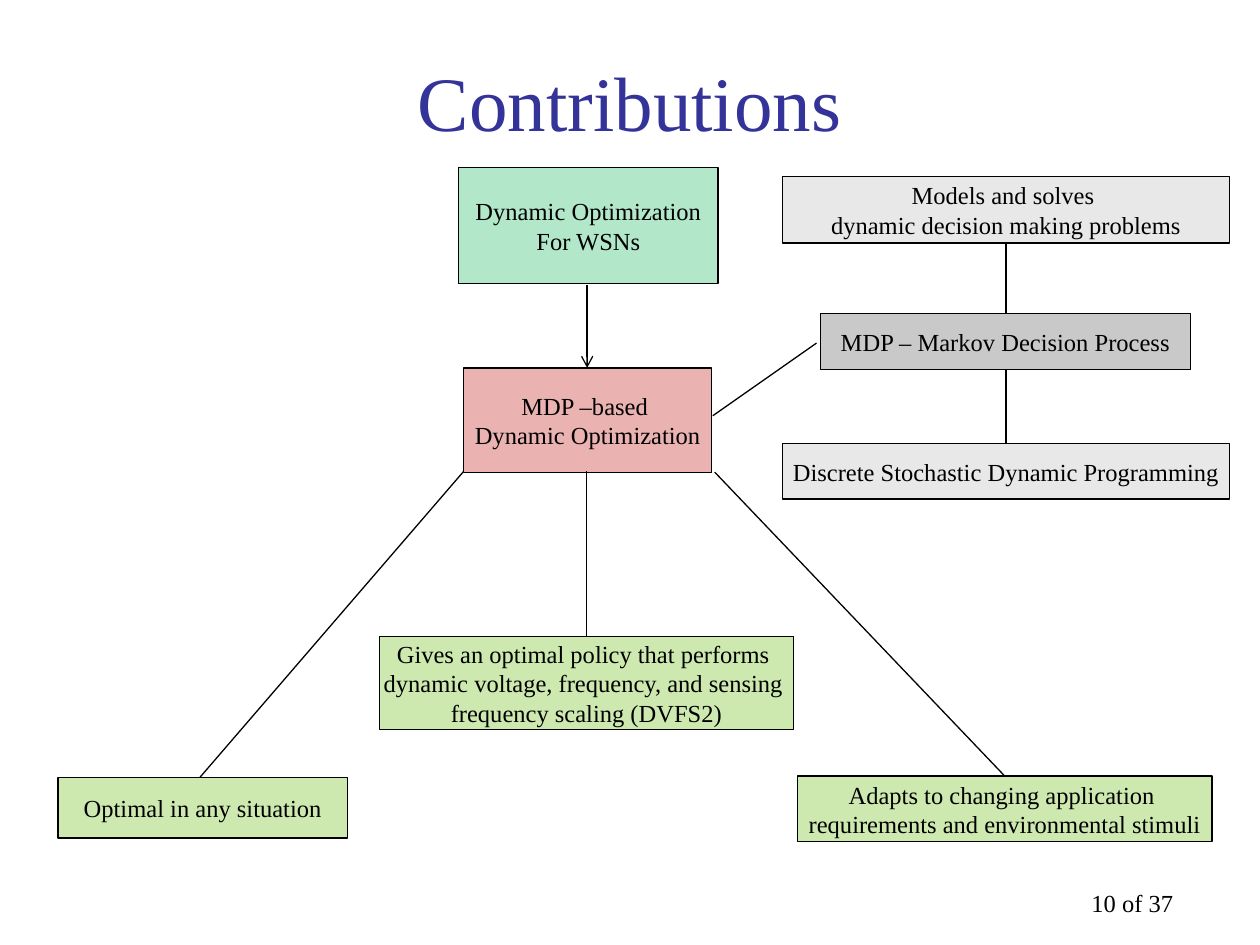
from lxml import etree
from pptx import Presentation
from pptx import util as u
from pptx.dml.color import RGBColor
from pptx.enum import shapes, text
from pptx.oxml import ns

COLS, ROWS = 100, 75
UNIT = u.Inches(10) // COLS

BLACK = RGBColor(0x00, 0x00, 0x00)
NAVY = RGBColor(0x33, 0x33, 0x99)
SILVER = RGBColor(0xD9, 0xD9, 0xD9)
GREY = RGBColor(0xA6, 0xA6, 0xA6)
LIME = RGBColor(0x92, 0xD0, 0x50)
GREEN = RGBColor(0x00, 0xB0, 0x50)
RED = RGBColor(0xC0, 0x00, 0x00)

RECT = shapes.MSO_SHAPE.RECTANGLE
CALL = shapes.MSO_SHAPE.LINE_CALLOUT_1
MID = text.PP_ALIGN.CENTER
FRAME = {"vertical_anchor": text.MSO_ANCHOR.MIDDLE, "word_wrap": False}
FONT = {"name": "Times New Roman", "size": u.Pt(14)}

# Fill and opacity in percent of each kind of box
TOPIC = (SILVER, 60)
MODEL = (GREY, 60)
GAIN = (LIME, 45)
GOAL = (GREEN, 30)
CORE = (RED, 30)

# Place in columns and rows, style, lines of text,
# and the callout's leader as (y, x) start and end in shares of the box
BOXES = [
    ((62.1, 35.2, 35.5, 4.4), TOPIC,
     ["Discrete Stochastic Dynamic Programming"], (0, 0.5, -1.33, 0.5)),
    ((4.6, 61.7, 23, 4.8), GAIN,
     ["Optimal in any situation"], (0, 0.49, -5.06, 1.4)),
    ((65.1, 24.9, 29.4, 4.4), MODEL,
     ["MDP – Markov Decision Process"], (0.53, -0.01, 1.84, -0.29)),
    ((36.4, 13.3, 20.6, 9.2), GOAL,
     ["Dynamic Optimization", "For WSNs"], None),
    ((36.8, 29.2, 19.7, 8.3), CORE,
     ["MDP –based ", "Dynamic Optimization"], None),
    ((63.3, 61.6, 32.9, 5.2), GAIN,
     ["Adapts to changing application ",
      "requirements and environmental stimuli"], (0, 0.5, -4.64, -0.2)),
    ((30.1, 50.5, 32.9, 7.4), GAIN,
     ["Gives an optimal policy that performs ",
      "dynamic voltage, frequency, and sensing ",
      "frequency scaling (DVFS2)"], (0, 0.5, -1.77, 0.5)),
    ((62.1, 14, 35.5, 5.3), TOPIC,
     ["Models and solves ", "dynamic decision making problems"],
     (1, 0.5, 2.04, 0.5)),
]


def grid(vals):
    """Turn columns and rows into lengths."""
    return [round(v * UNIT) for v in vals]


def assign(obj, vals):
    for key, val in vals.items():
        setattr(obj, key, val)


def write(frame, lines, align=MID, color=BLACK, **font):
    for i, line in enumerate(lines):
        para = frame.paragraphs[0] if i == 0 else frame.add_paragraph()
        para.alignment = align
        run = para.add_run()
        run.text = line
        assign(run.font, {**FONT, **font})
        run.font.color.rgb = color


def label(slide, place, line, **style):
    frame = slide.shapes.add_textbox(*grid(place)).text_frame
    frame.word_wrap = True
    write(frame, [line], **style)
    return frame


def outline(line):
    line.color.rgb = BLACK
    line.width = u.Pt(0.75)


def box(slide, place, style, lines, leader):
    """Add a plain box, or a callout if it has a leader."""
    shape = slide.shapes.add_shape(CALL if leader else RECT, *grid(place))
    shape.shadow.inherit = False
    for i, share in enumerate(leader or ()):
        shape.adjustments[i] = share
    color, alpha = style
    shape.fill.solid()
    shape.fill.fore_color.rgb = color
    tint = shape.fill._xPr.find(".//" + ns.qn("a:srgbClr"))
    etree.SubElement(tint, ns.qn("a:alpha"), val=str(alpha * 1000))
    outline(shape.line)
    assign(shape.text_frame, FRAME)
    write(shape.text_frame, lines)


def arrow(slide, ends):
    link = slide.shapes.add_connector(
        shapes.MSO_CONNECTOR.STRAIGHT, *grid(ends))
    outline(link.line)
    etree.SubElement(link.line._get_or_add_ln(), ns.qn("a:tailEnd"),
                     type="arrow")
    etree.SubElement(link._element.spPr, ns.qn("a:effectLst"))


def main():
    deck = Presentation()
    deck.slide_width, deck.slide_height = grid((COLS, ROWS))
    slide = deck.slides.add_slide(deck.slide_layouts[6])
    label(slide, (73.3, 70, 20.8, 5), "10 of 37",
          align=text.PP_ALIGN.RIGHT)
    title = label(slide, (7.5, 1.7, 85, 12.5), "Contributions",
                  color=NAVY, size=u.Pt(44))
    title.vertical_anchor = text.MSO_ANCHOR.MIDDLE
    for item in BOXES:
        box(slide, *item)
    arrow(slide, (46.6, 22.6, 46.6, 29.2))
    deck.save("out.pptx")


if __name__ == "__main__":
    main()
